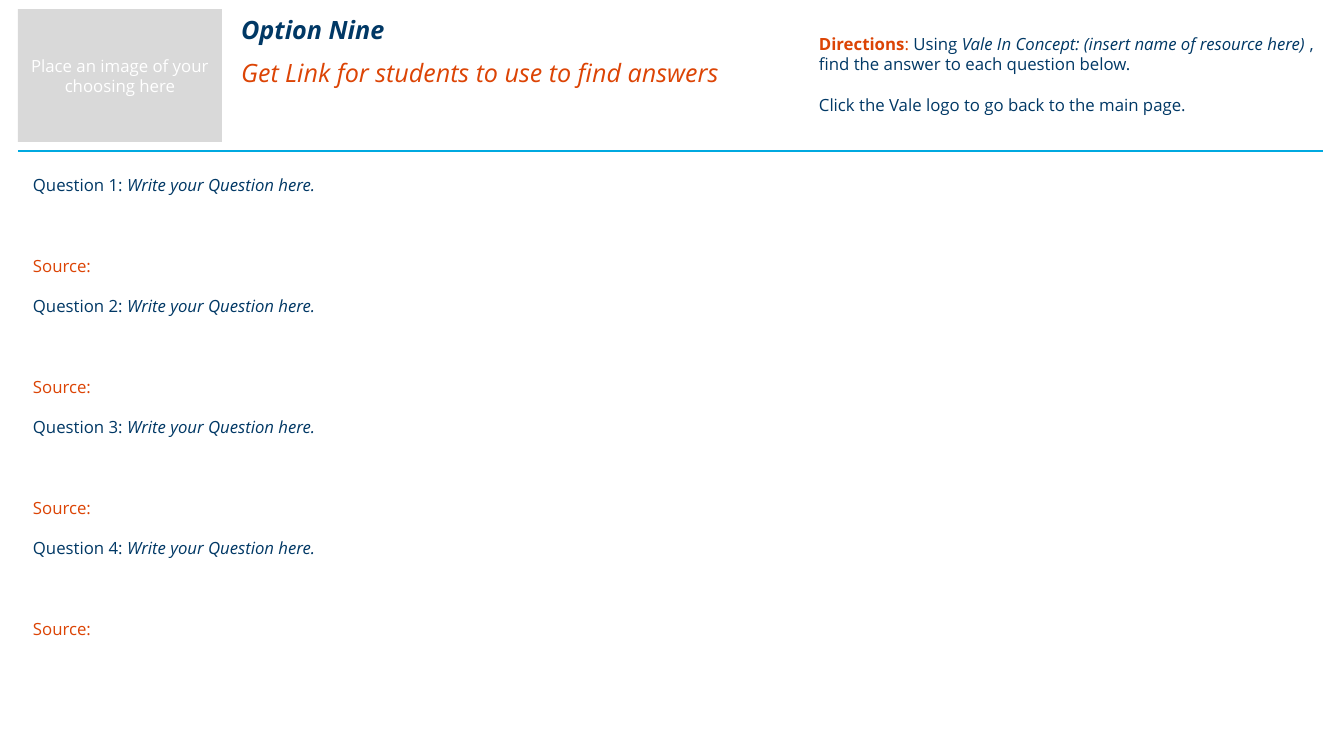
from pptx import Presentation
from pptx import util as u
from pptx.dml.color import RGBColor
from pptx.enum import shapes, text
from pptx.oxml.ns import qn
from lxml import etree

EMU_PER_PX = 914400 / 100.8
FONT = "Open Sans"
NAVY = RGBColor(0x00, 0x38, 0x65)
ORANGE = RGBColor(0xDC, 0x44, 0x05)
CYAN = RGBColor(0x00, 0xA9, 0xE0)
GREY = RGBColor(0xD9, 0xD9, 0xD9)
WHITE = RGBColor(0xFF, 0xFF, 0xFF)
BODY_SIZE = 12
BODY_LINE = 14.4
QUESTION_COUNT = 4


def px(length):
    return u.Emu(round(length * EMU_PER_PX))


def place(shape, box):
    shape.left, shape.top, shape.width, shape.height = map(px, box)


def add_run(paragraph, words, color, size=BODY_SIZE, bold=False, italic=False):
    run = paragraph.add_run()
    run.text = words
    font = run.font
    font.name, font.size, font.bold, font.italic = FONT, u.Pt(size), bold, italic
    font.color.rgb = color


def add_paragraph(frame, space_before):
    paragraph = frame.add_paragraph()
    paragraph.space_before = u.Pt(space_before)
    return paragraph


def add_text_frame(slide, box):
    frame = slide.shapes.add_textbox(*map(px, box)).text_frame
    frame.word_wrap = True
    return frame


def add_heading(slide, box):
    title = slide.shapes.title
    place(title, box)
    frame = title.text_frame
    frame.auto_size = text.MSO_AUTO_SIZE.NONE
    frame.vertical_anchor = text.MSO_ANCHOR.TOP
    add_run(frame.paragraphs[0], "Option Nine", NAVY, 18, bold=True, italic=True)
    add_run(add_paragraph(frame, 9.5), "Get Link for students to use to find answers",
            ORANGE, 18, italic=True)
    for paragraph in frame.paragraphs:
        paragraph.alignment = text.PP_ALIGN.LEFT


def add_image_spot(slide, box):
    spot = slide.shapes.add_shape(shapes.MSO_SHAPE.RECTANGLE, *map(px, box))
    spot.shadow.inherit = False
    spot.fill.solid()
    spot.fill.fore_color.rgb = GREY
    spot.line.fill.background()
    frame = spot.text_frame
    frame.word_wrap = True
    frame.vertical_anchor = text.MSO_ANCHOR.MIDDLE
    paragraph = frame.paragraphs[0]
    paragraph.alignment = text.PP_ALIGN.CENTER
    add_run(paragraph, "Place an image of your choosing here", WHITE)


def add_directions(slide, box):
    frame = add_text_frame(slide, box)
    task = frame.paragraphs[0]
    add_run(task, "Directions", ORANGE, bold=True)
    add_run(task, ": ", ORANGE)
    add_run(task, "Using ", NAVY)
    add_run(task, "Vale In Concept: (insert name of resource here) ", NAVY, italic=True)
    add_run(task, ", find the answer to each question below.", NAVY)
    add_run(add_paragraph(frame, BODY_LINE),
            "Click the Vale logo to go back to the main page.", NAVY)


def add_divider(slide, left, right, y):
    divider = slide.shapes.add_connector(
        shapes.MSO_CONNECTOR.STRAIGHT, px(left), px(y), px(right), px(y))
    divider.line.color.rgb = CYAN
    divider.line.width = u.Pt(1.5)
    etree.SubElement(divider._element.spPr, qn("a:effectLst"))


def add_questions(slide, box):
    """List the questions, each with three lines of room for an answer."""
    frame = add_text_frame(slide, box)
    for number in range(1, QUESTION_COUNT + 1):
        question = frame.paragraphs[0] if number == 1 else add_paragraph(frame, BODY_LINE)
        add_run(question, f"Question {number}: ", NAVY)
        add_run(question, "Write your Question here.", NAVY, italic=True)
        add_run(add_paragraph(frame, 3 * BODY_LINE), "Source:", ORANGE)


def main():
    presentation = Presentation()
    presentation.slide_width, presentation.slide_height = px(1344), px(756)
    slide = presentation.slides.add_slide(presentation.slide_layouts[5])
    add_heading(slide, (231, 9, 572, 85))
    add_divider(slide, 18, 1323, 151)
    add_questions(slide, (23, 170, 1304, 495))
    add_directions(slide, (809, 29, 518, 92))
    add_image_spot(slide, (18, 9, 204, 133))
    presentation.save("out.pptx")


if __name__ == "__main__":
    main()
